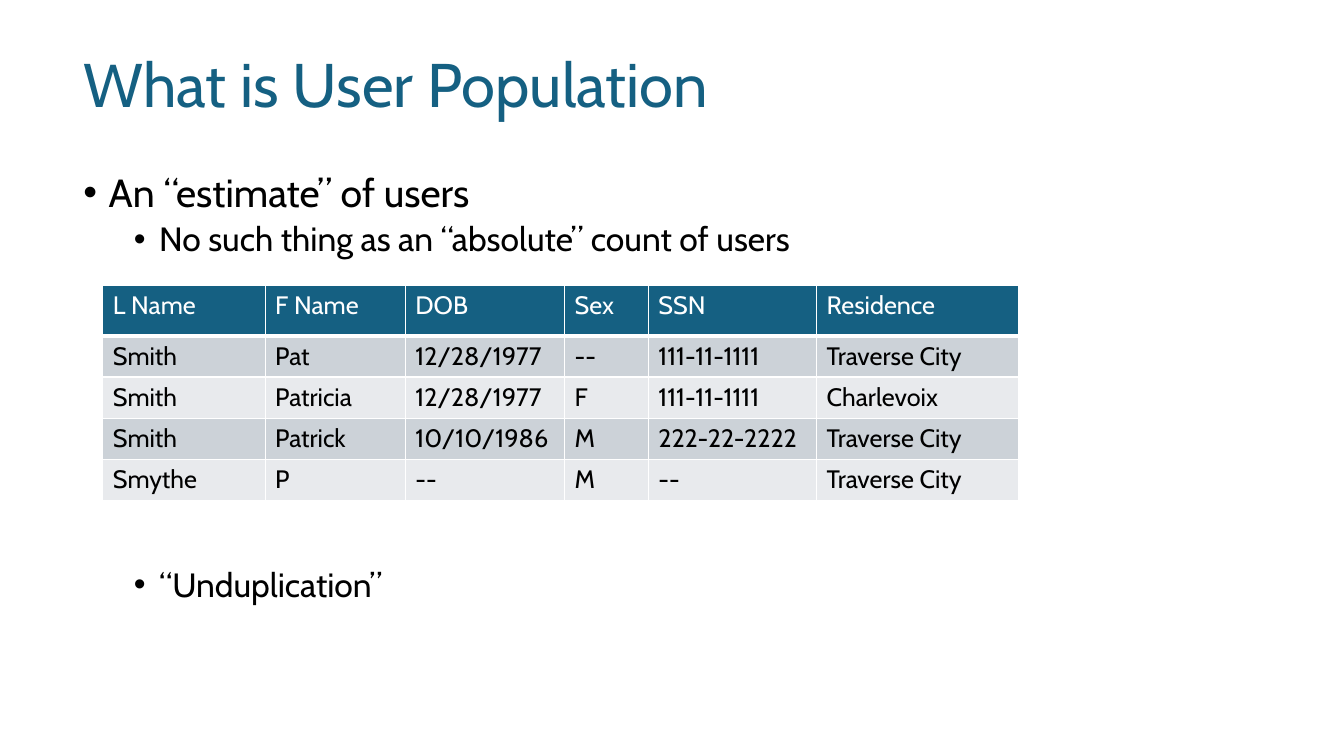
import pptx
import pptx.util
import pptx.dml.color
import pptx.enum.text
import pptx.oxml
import pptx.oxml.ns
from pptx.util import Inches, Pt

# Content
TITLE = "What is User Population"
# text, size, left margin in inches, space before in points
# (the last bullet sits below the table)
BULLETS = [
    ("An “estimate” of users", 28, 0.25, 0),
    ("No such thing as an “absolute” count of users", 24, 0.75, 5),
    ("“Unduplication”", 24, 0.75, 221),
]
USERS = [
    ("L Name", "F Name", "DOB", "Sex", "SSN", "Residence"),
    ("Smith", "Pat", "12/28/1977", "--", "111-11-1111", "Traverse City"),
    ("Smith", "Patricia", "12/28/1977", "F", "111-11-1111", "Charlevoix"),
    ("Smith", "Patrick", "10/10/1986", "M", "222-22-2222", "Traverse City"),
    ("Smythe", "P", "--", "M", "--", "Traverse City"),
]
COLUMN_WIDTHS = [1.61, 1.39, 1.58, 0.83, 1.67, 2]
HEADER_HEIGHT, ROW_HEIGHT = 0.5, 0.41

FONT = "Cabin"
TEAL = pptx.dml.color.RGBColor(0x15, 0x60, 0x82)
BLACK = pptx.dml.color.RGBColor(0, 0, 0)
WHITE = pptx.dml.color.RGBColor(255, 255, 255)
BANDS = [pptx.dml.color.RGBColor(0xE8, 0xEA, 0xED),
         pptx.dml.color.RGBColor(0xCC, 0xD2, 0xD8)]


def style_runs(paragraph, size, color):
    for run in paragraph.runs:
        run.font.name = FONT
        run.font.size = Pt(size)
        run.font.color.rgb = color


def add_text_frame(slide, left, top, width, height):
    box = slide.shapes.add_textbox(
        Inches(left), Inches(top), Inches(width), Inches(height))
    box.text_frame.word_wrap = True
    return box.text_frame


def add_bullet(paragraph, margin):
    properties = paragraph._p.get_or_add_pPr()
    properties.set("marL", str(Inches(margin)))
    properties.set("indent", str(Inches(-0.25)))
    namespace = pptx.oxml.ns.nsdecls("a")
    properties.append(pptx.oxml.parse_xml(
        f'<a:buFont {namespace} typeface="Arial"/>'))
    properties.append(pptx.oxml.parse_xml(
        f'<a:buChar {namespace} char="•"/>'))


def set_borders(cell, bottom_width):
    properties = cell._tc.get_or_add_tcPr()
    widths = {"lnL": 1, "lnR": 1, "lnT": 1, "lnB": bottom_width}
    # Borders come before the fill in the cell properties
    for position, (side, width) in enumerate(widths.items()):
        properties.insert(position, pptx.oxml.parse_xml(
            f'<a:{side} {pptx.oxml.ns.nsdecls("a")} w="{Pt(width)}">'
            f'<a:solidFill><a:srgbClr val="{WHITE}"/></a:solidFill>'
            f'</a:{side}>'))


def add_title(slide):
    frame = add_text_frame(slide, 0.73, 0.48, 10.56, 0.78)
    frame.vertical_anchor = pptx.enum.text.MSO_ANCHOR.MIDDLE
    frame.text = TITLE
    frame.paragraphs[0].line_spacing = 0.9
    style_runs(frame.paragraphs[0], 44, TEAL)


def add_bullets(slide):
    frame = add_text_frame(slide, 0.73, 1.67, 11.87, 4.76)
    for index, (text, size, margin, space) in enumerate(BULLETS):
        paragraph = frame.add_paragraph() if index else frame.paragraphs[0]
        paragraph.text = text
        paragraph.level = 1 if index else 0
        paragraph.line_spacing = 0.9
        paragraph.space_before = Pt(space)
        add_bullet(paragraph, margin)
        style_runs(paragraph, size, BLACK)


def add_user_table(slide):
    heights = [HEADER_HEIGHT] + [ROW_HEIGHT] * (len(USERS) - 1)
    table = slide.shapes.add_table(
        len(USERS), len(COLUMN_WIDTHS), Inches(1.02), Inches(2.83),
        Inches(sum(COLUMN_WIDTHS)), Inches(sum(heights))).table
    for column, width in zip(table.columns, COLUMN_WIDTHS):
        column.width = Inches(width)
    for row_index, values in enumerate(USERS):
        table.rows[row_index].height = Inches(heights[row_index])
        is_header = row_index == 0
        for column_index, value in enumerate(values):
            cell = table.cell(row_index, column_index)
            cell.text_frame.text = value
            style_runs(cell.text_frame.paragraphs[0], 18,
                       WHITE if is_header else BLACK)
            cell.fill.solid()
            cell.fill.fore_color.rgb = TEAL if is_header else BANDS[row_index % 2]
            set_borders(cell, 3 if is_header else 1)


def main():
    presentation = pptx.Presentation()
    presentation.slide_width = Inches(13.33)
    presentation.slide_height = Inches(7.5)
    slide = presentation.slides.add_slide(presentation.slide_layouts[6])
    add_title(slide)
    add_bullets(slide)
    add_user_table(slide)
    presentation.save("out.pptx")


if __name__ == "__main__":
    main()
